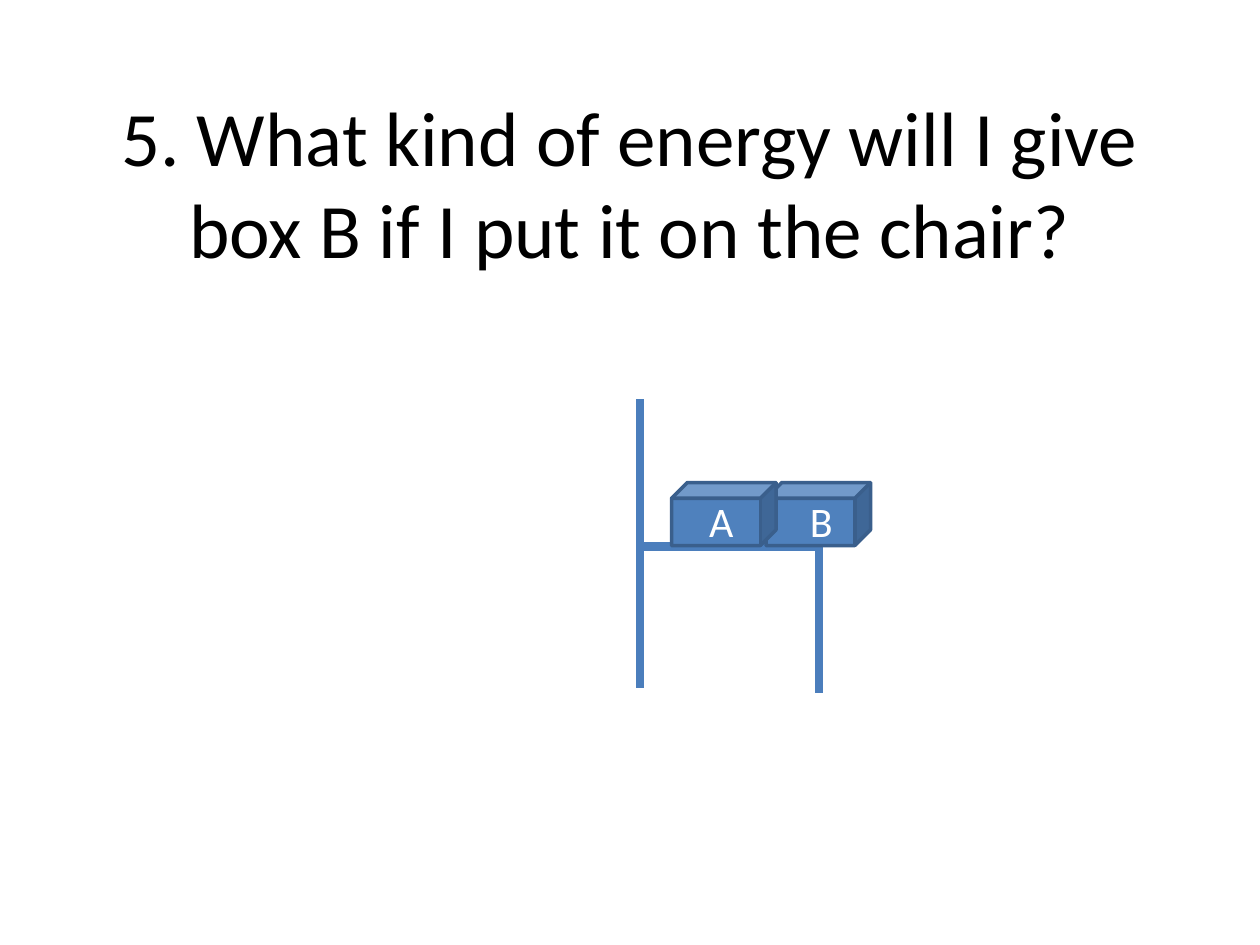
from dataclasses import dataclass
from lxml.etree import SubElement
from pptx import Presentation
from pptx.dml.color import RGBColor as RGB
from pptx.enum.shapes import MSO_CONNECTOR as Link, MSO_SHAPE as Shape
from pptx.enum.text import MSO_ANCHOR as Anchor, MSO_AUTO_SIZE as Fit, PP_ALIGN as Align
from pptx.oxml.ns import qn
from pptx.util import Inches, Pt


@dataclass(frozen=True)
class Theme:
    font: str = "Calibri"
    ink: RGB = RGB(0, 0, 0)
    white: RGB = RGB(255, 255, 255)
    wood: RGB = RGB(0x4B, 0x7E, 0xBC)
    face: RGB = RGB(0x4F, 0x81, 0xBD)
    edge: RGB = RGB(0x3A, 0x5F, 0x8C)
    title: int = 44
    label: int = 24
    beam: int = 5
    rim: int = 2


THEME = Theme()


def add_text(slide, box, text, size, color, align=Align.LEFT,
             anchor=Anchor.TOP, fit=Fit.NONE):
    frame = slide.shapes.add_textbox(*map(Inches, box)).text_frame
    frame.word_wrap = True
    frame.auto_size = fit
    frame.vertical_anchor = anchor
    para = frame.paragraphs[0]
    para.alignment = align
    run = para.add_run()
    run.text = text
    run.font.name = THEME.font
    run.font.size = Pt(size)
    run.font.color.rgb = color


def add_beam(slide, kind, start, end):
    beam = slide.shapes.add_connector(kind, *map(Inches, (*start, *end)))
    beam.line.color.rgb = THEME.wood
    beam.line.width = Pt(THEME.beam)
    SubElement(beam._element.spPr, qn("a:effectLst"))
    return beam


def add_title(slide, box):
    add_text(slide, box, "5. What kind of energy will I give box B if I put it on the chair?",
             THEME.title, THEME.ink, Align.CENTER, Anchor.MIDDLE)


def add_chair(slide, box):
    left, top, wide, high = box
    mid_x, mid_y = left + wide / 2, top + high / 2
    # Back, seat and front leg: an elbow turned a quarter about its centre
    frame = add_beam(slide, Link.ELBOW, (mid_x + high / 2, mid_y - wide / 2),
                     (mid_x - high / 2, mid_y + wide / 2))
    frame._element.spPr.find(qn("a:xfrm")).set("rot", str(270 * 60000))
    # Rear leg
    add_beam(slide, Link.STRAIGHT, (left, mid_y - 0.03), (left, top + high - 0.04))


def add_boxes(slide, box):
    left, top, wide, high = box
    step = 0.75
    # Cubes, the right one behind
    for x in (left + step, left):
        cube = slide.shapes.add_shape(Shape.CUBE, *map(Inches, (x, top, wide - step, high)))
        cube.shadow.inherit = False
        cube.fill.solid()
        cube.fill.fore_color.rgb = THEME.face
        cube.line.color.rgb = THEME.edge
        cube.line.width = Pt(THEME.rim)
    # Letters
    for name, shift in (("A", 0.2), ("B", 1)):
        add_text(slide, (left + shift, top + 0.05, 0.75, 0.5), name,
                 THEME.label, THEME.white, fit=Fit.SHAPE_TO_FIT_TEXT)


def main():
    deck = Presentation()
    deck.slide_width, deck.slide_height = Inches(10), Inches(7.5)
    slide = deck.slides.add_slide(deck.slide_layouts[6])
    add_title(slide, (0.5, 0.3, 9, 2.28))
    add_chair(slide, (5.08, 3.17, 1.42, 2.33))
    add_boxes(slide, (5.33, 3.83, 1.58, 0.5))
    deck.save("out.pptx")


if __name__ == "__main__":
    main()
